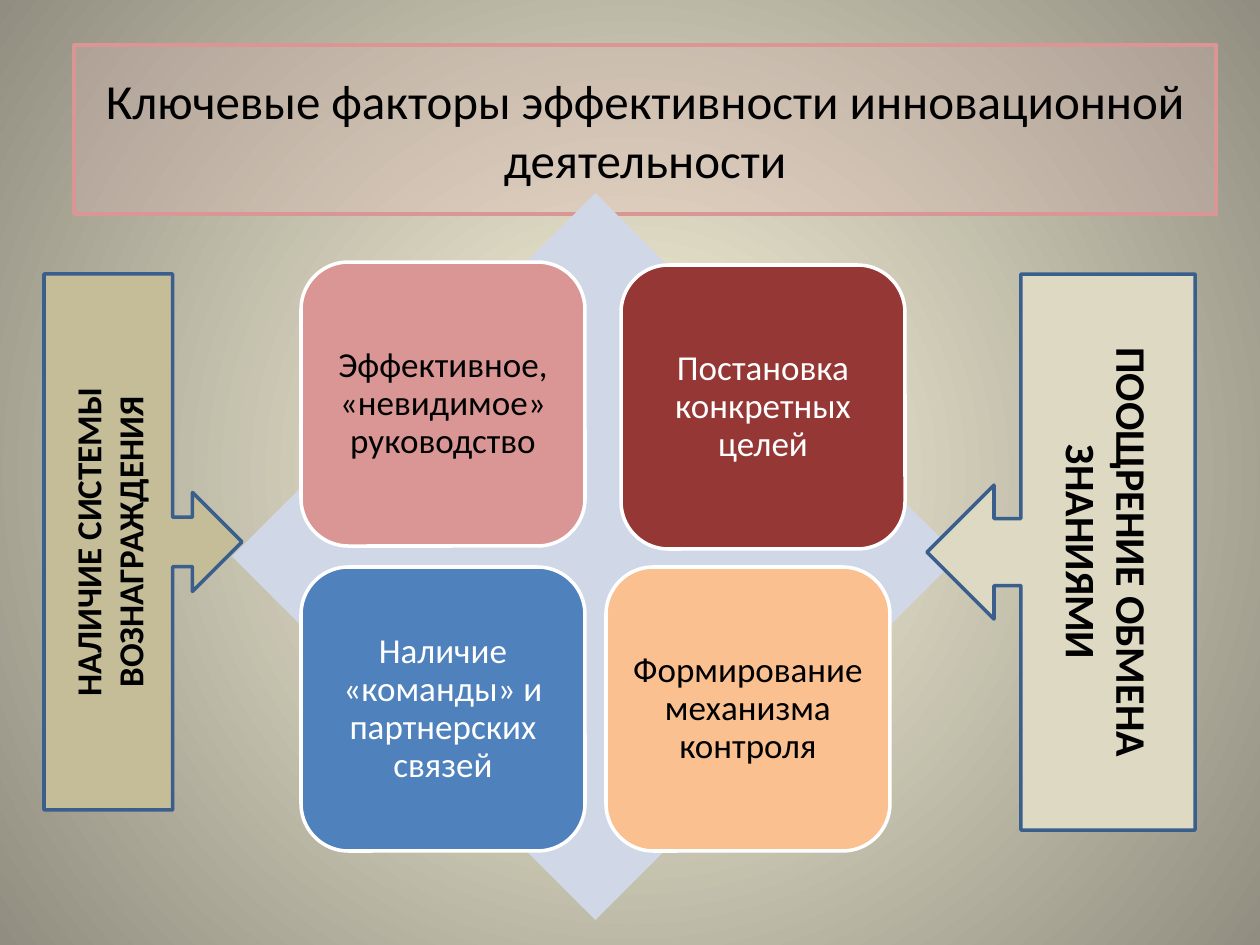
"""Build a slide on the key factors of effective innovation."""
import pptx
import pptx.util
import pptx.dml.color
import pptx.enum.shapes
import pptx.enum.text
import pptx.oxml
import pptx.oxml.ns

SCALE = 914400 / 126
SHAPES = pptx.enum.shapes.MSO_SHAPE
TITLE = "Ключевые факторы эффективности инновационной деятельности"
TITLE_BOX = (74, 45, 1142, 169)
DIAMOND_BOX = (232, 193, 727, 727)
CARD_SIZE = 284
CARDS = [
    ("Эффективное, «невидимое» руководство", 301, 262, "D99694", "000000"),
    ("Постановка конкретных целей", 621, 265, "953735", "FFFFFF"),
    ("Наличие «команды» и партнерских связей", 301, 567, "4F81BD", "FFFFFF"),
    ("Формирование механизма контроля", 606, 567, "FAC090", "000000"),
]
CALLOUTS = [
    ("НАЛИЧИЕ СИСТЕМЫ ВОЗНАГРАЖДЕНИЯ", (44, 274, 198, 536), 0, "C4BD97", 20),
    ("ПООЩРЕНИЕ ОБМЕНА ЗНАНИЯМИ", (927, 274, 268, 556), 180, "DDD9C3", 24),
]


def px(value):
    return pptx.util.Emu(round(value * SCALE))


def color(value):
    return pptx.dml.color.RGBColor.from_string(value)


def element(tag, parent, **attributes):
    child = pptx.oxml.parse_xml(f"<a:{tag} {pptx.oxml.ns.nsdecls('a')}/>")
    for name, value in attributes.items():
        child.set(name, str(value))
    parent.append(child)
    return child


def paint(shape, fill, line=None):
    shape.fill.solid()
    shape.fill.fore_color.rgb = color(fill)
    if line:
        shape.line.color.rgb = color(line)
        shape.line.width = pptx.util.Pt(2)
    else:
        shape.line.fill.background()


def add_shape(slide, kind, box, fill, line=None):
    shape = slide.shapes.add_shape(kind, *map(px, box))
    shape.shadow.inherit = False
    paint(shape, fill, line)
    return shape


def write(shape, text, size, font_color="000000", bold=False, spacing=1.0):
    frame = shape.text_frame
    frame.word_wrap = True
    frame.auto_size = pptx.enum.text.MSO_AUTO_SIZE.NONE
    frame.vertical_anchor = pptx.enum.text.MSO_ANCHOR.MIDDLE
    paragraph = frame.paragraphs[0]
    paragraph.alignment = pptx.enum.text.PP_ALIGN.CENTER
    paragraph.line_spacing = spacing
    run = paragraph.add_run()
    run.text = text
    run.font.name = "Calibri"
    run.font.size = pptx.util.Pt(size)
    run.font.bold = bold
    run.font.color.rgb = color(font_color)
    return frame


def set_background(slide):
    fill = slide.background.fill
    fill.gradient()
    for stop, value in zip(fill.gradient_stops, ("FCF7DD", "918E81")):
        stop.color.rgb = color(value)
    for stop, position in zip(fill.gradient_stops, (0, 1)):
        stop.position = position
    gradient = slide.element.find(".//" + pptx.oxml.ns.qn("a:gradFill"))
    gradient.remove(gradient.find(pptx.oxml.ns.qn("a:lin")))
    circle = element("path", gradient, path="circle")
    element("fillToRect", circle, l=50000, t=50000, r=50000, b=50000)


def add_title(slide):
    title = slide.shapes.title
    title.left, title.top, title.width, title.height = map(px, TITLE_BOX)
    properties = title.element.spPr
    element("avLst", element("prstGeom", properties, prst="roundRect"))
    paint(title, "E6B9B8", "D99694")
    tint = properties.find(".//" + pptx.oxml.ns.qn("a:srgbClr"))
    element("alpha", tint, val=25000)
    write(title, TITLE, 28)


def add_cards(slide):
    for text, left, top, fill, font_color in CARDS:
        box = (left, top, CARD_SIZE, CARD_SIZE)
        card = add_shape(slide, SHAPES.ROUNDED_RECTANGLE, box, fill, "FFFFFF")
        frame = write(card, text, 20, font_color, spacing=0.9)
        frame.margin_left = frame.margin_right = 0


def add_callouts(slide):
    for text, box, rotation, fill, size in CALLOUTS:
        callout = add_shape(slide, SHAPES.RIGHT_ARROW_CALLOUT, box, fill, "3A5F8C")
        callout.rotation = rotation
        write(callout, text, size, bold=True)
        body = callout.element.find(".//" + pptx.oxml.ns.qn("a:bodyPr"))
        body.set("vert", "vert270")


def main():
    presentation = pptx.Presentation()
    presentation.slide_width, presentation.slide_height = px(1260), px(945)
    slide = presentation.slides.add_slide(presentation.slide_layouts[5])
    set_background(slide)
    add_title(slide)
    add_shape(slide, SHAPES.DIAMOND, DIAMOND_BOX, "D0D8E8")
    add_cards(slide)
    add_callouts(slide)
    presentation.save("out.pptx")


if __name__ == "__main__":
    main()
